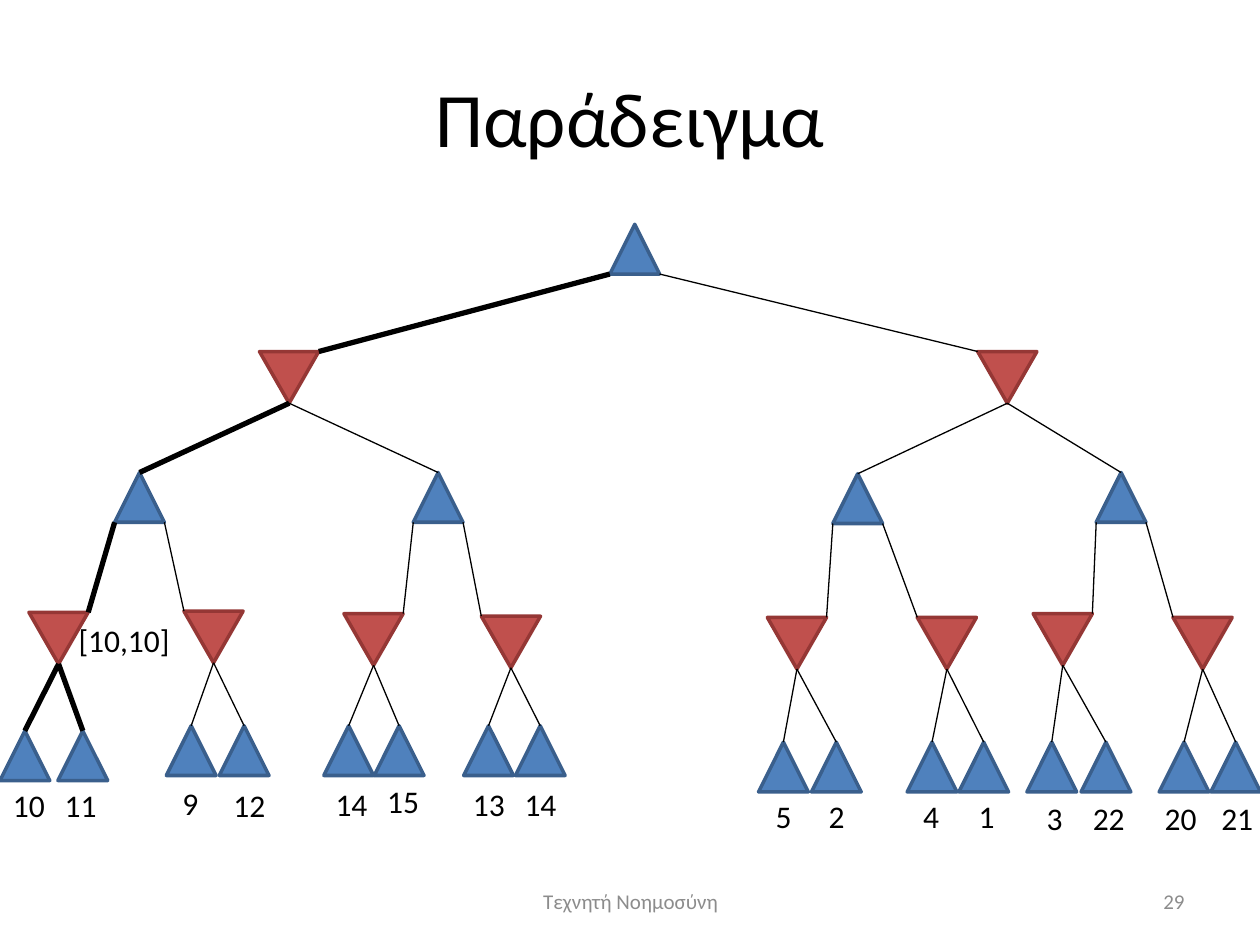
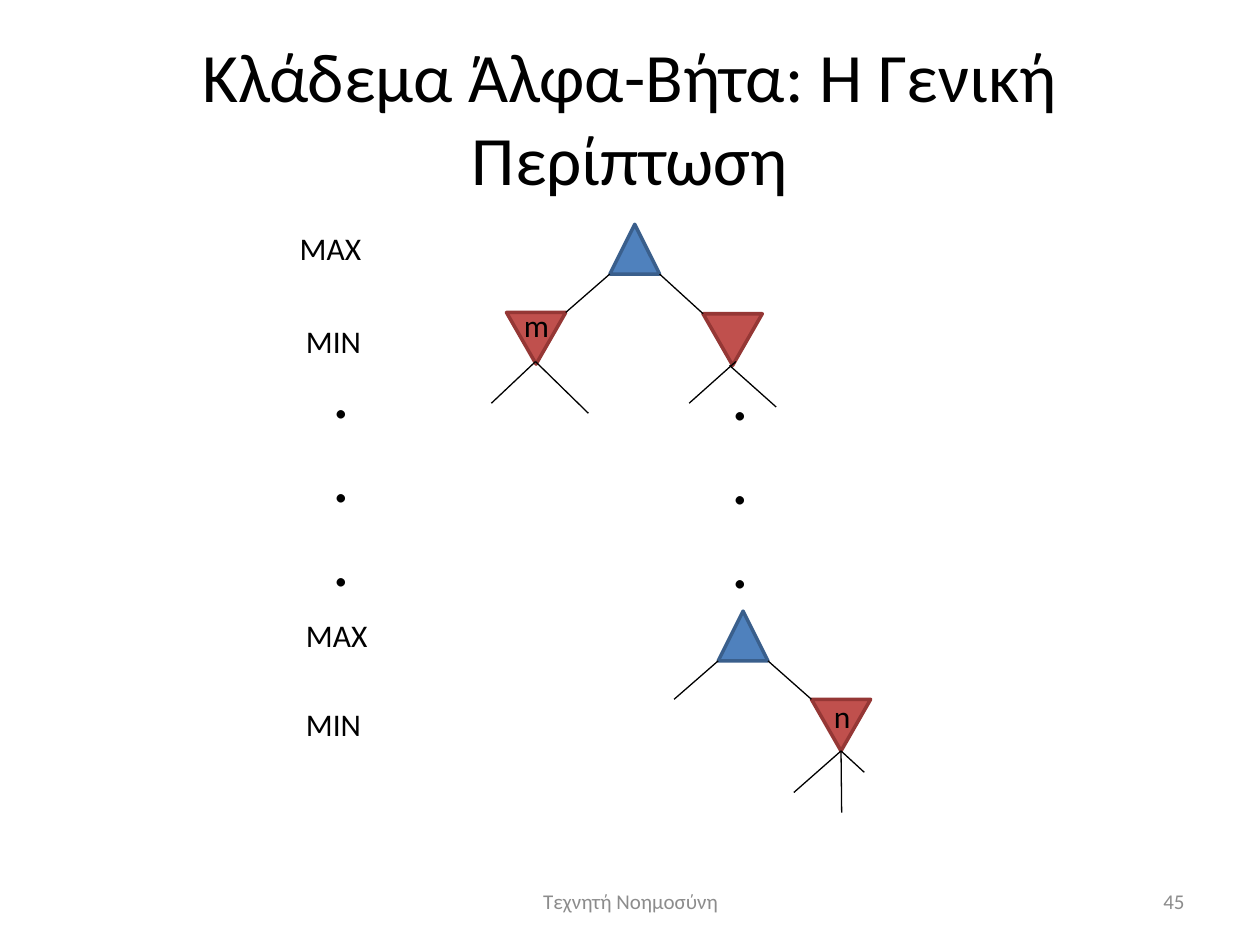
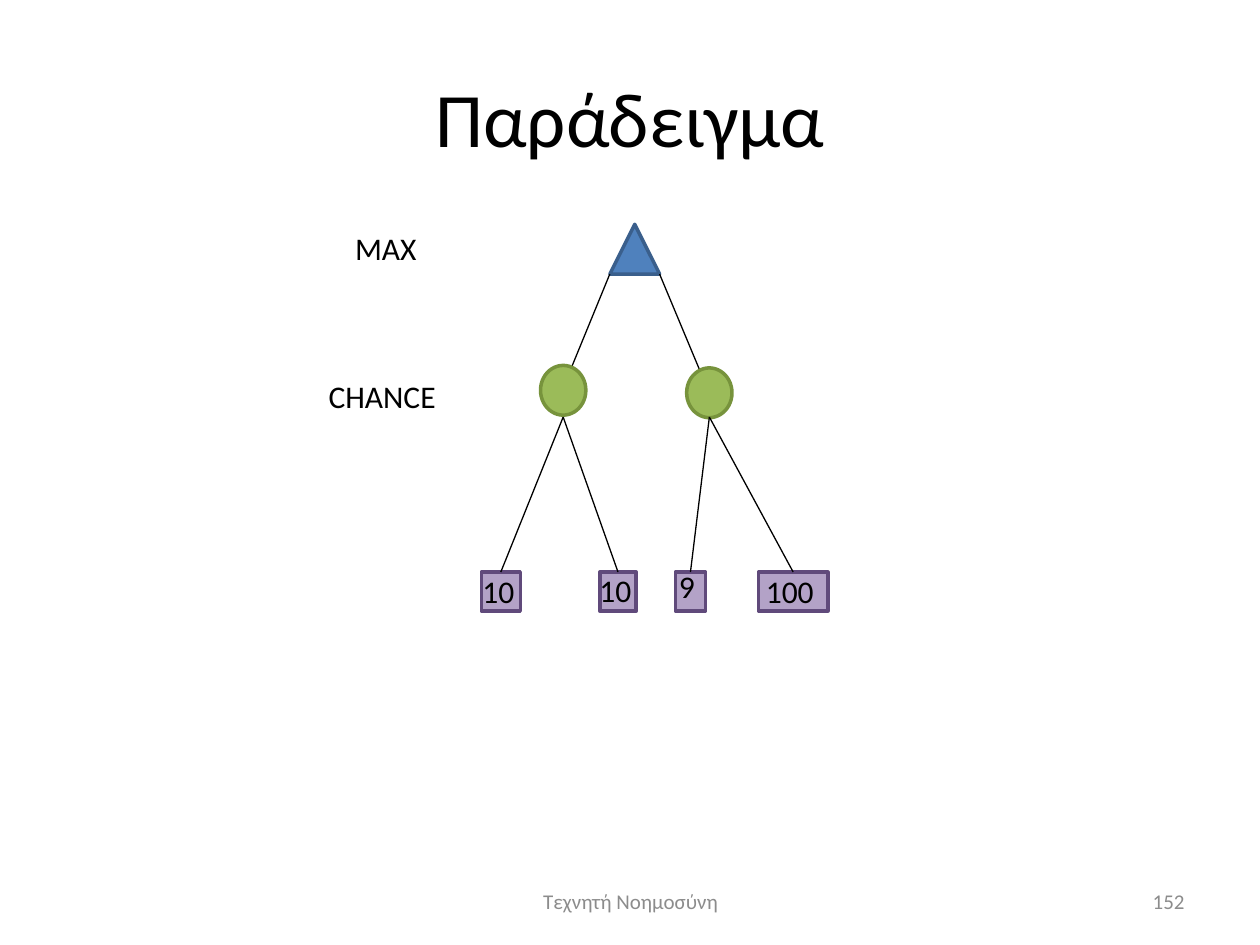
from collections import namedtuple

from pptx import Presentation
from pptx import util as u
from pptx.dml.color import RGBColor
from pptx.enum import shapes, text
from pptx.oxml.ns import qn
from lxml import etree

COLUMNS, ROWS = 100, 75
BLANK_LAYOUT = 6
FONT = "Calibri"
BLACK, GREY = "000000", "8C8C8C"
THIN, BOLD = 0.75, 3
LEFT, CENTER, RIGHT = text.PP_ALIGN.LEFT, text.PP_ALIGN.CENTER, text.PP_ALIGN.RIGHT

Role = namedtuple("Role", "outline fill border width height")
MAX = Role(shapes.MSO_SHAPE.ISOSCELES_TRIANGLE, "4F81BD", "3A5F8C", 3.95, 3.95)
MIN = Role(shapes.MSO_SHAPE.FLOWCHART_MERGE, "C0504D", "953735", 4.7, 4.1)
CHANCE = Role(shapes.MSO_SHAPE.OVAL, "9BBB59", "77933C", 3.6, 3.95)
OUTCOME = Role(shapes.MSO_SHAPE.RECTANGLE, "B3A2C7", "604A7B", 3.1, 3.1)


class Node(namedtuple("Node", "role left top")):
    def point(self, across, down):
        """Point at the given shares of the node's width and height."""
        return self.left + across * self.role.width, self.top + down * self.role.height

    def exit(self, side):
        """Where the edge to the child on side 0 (left) or 1 (right) starts."""
        return self.point(side, 1) if self.role is MAX else self.point(0.5, 1)

    def entry(self, side):
        """Where the edge from the parent ends, for the child on the given side."""
        return self.point(1 - side, 0) if self.role is MIN else self.point(0.5, 0)


def rgb(code):
    return RGBColor.from_string(code)


def write(frame, content, size=18, color=BLACK, align=LEFT, anchor=text.MSO_ANCHOR.TOP):
    frame.word_wrap = True
    frame.vertical_anchor = anchor
    for index, line in enumerate(content.split("\n")):
        paragraph = frame.paragraphs[0] if index == 0 else frame.add_paragraph()
        paragraph.alignment = align
        run = paragraph.add_run()
        run.text = line
        run.font.name, run.font.size = FONT, u.Pt(size)
        run.font.color.rgb = rgb(color)


class Deck:
    """Draws on the current slide; lengths are grid columns and rows."""

    def __init__(self):
        self.show = Presentation()
        self.show.slide_width, self.show.slide_height = u.Inches(10), u.Inches(7.5)
        self.slide = None

    def x(self, columns):
        return round(self.show.slide_width * columns / COLUMNS)

    def y(self, rows):
        return round(self.show.slide_height * rows / ROWS)

    def box(self, left, top, width, height):
        return self.x(left), self.y(top), self.x(width), self.y(height)

    def start(self, title, number, size=44):
        self.slide = self.show.slides.add_slide(self.show.slide_layouts[BLANK_LAYOUT])
        middle = text.MSO_ANCHOR.MIDDLE
        self.label(title, 5, 3, 90, 12.5, size=size, align=CENTER, anchor=middle)
        footer = dict(size=12, color=GREY, anchor=middle)
        self.label("Τεχνητή Νοημοσύνη", 34.2, 69.5, 31.7, 4, align=CENTER, **footer)
        self.label(str(number), 71.7, 69.5, 23.3, 4, align=RIGHT, **footer)

    def label(self, content, left, top, width=8.7, height=4, **style):
        holder = self.slide.shapes.add_textbox(*self.box(left, top, width, height))
        write(holder.text_frame, content, **style)

    def node(self, role, left, top):
        shape = self.slide.shapes.add_shape(
            role.outline, *self.box(left, top, role.width, role.height))
        shape.shadow.inherit = False
        shape.fill.solid()
        shape.fill.fore_color.rgb = rgb(role.fill)
        shape.line.color.rgb = rgb(role.border)
        shape.line.width = u.Pt(2)
        return Node(role, left, top)

    def edge(self, begin, end, weight=THIN):
        line = self.slide.shapes.add_connector(
            shapes.MSO_CONNECTOR.STRAIGHT,
            self.x(begin[0]), self.y(begin[1]), self.x(end[0]), self.y(end[1]))
        line.line.color.rgb = rgb(BLACK)
        line.line.width = u.Pt(weight)
        etree.SubElement(line._element.spPr, qn("a:effectLst"))

    def link(self, parent, child, side, weight=THIN):
        self.edge(parent.exit(side), child.entry(side), weight)

    def stubs(self, begin, *ends):
        """Edges to children that are not shown."""
        for end in ends:
            self.edge(begin, end)

    def dots(self, left, top):
        self.label(".\n.\n.", left, top, 2.3, 21.2, size=40)


def minimax_example(deck):
    deck.start("Παράδειγμα", 29)
    levels = [
        (MIN, [(20.6, 27.9), (77.6, 27.9)]),
        (MAX, [(9.1, 37.5), (32.8, 37.5), (66.1, 37.6), (87, 37.5)]),
        (MIN, [(2.3, 48.6), (14.6, 48.5), (27.3, 48.7), (38.2, 48.9),
               (60.9, 49), (72.8, 49), (82, 48.7), (93.1, 49)]),
        (MAX, [(0, 58), (4.6, 58)]
         + [(left, 57.6) for left in (13.2, 17.4, 25.7, 29.7, 36.8, 40.9)]
         + [(left, 58.9) for left in (60.2, 64.4, 72, 76.1, 81.5, 85.8, 92, 96.1)]),
    ]
    parents = [deck.node(MAX, 48.4, 17.8)]
    for role, places in levels:
        children = [deck.node(role, *place) for place in places]
        for index, child in enumerate(children):
            explored = index == 0 or (index == 1 and len(children) == 16)
            deck.link(parents[index // 2], child, index % 2, BOLD if explored else THIN)
        parents = children

    leaf_values = [
        (10, -0.4, 61.9), (11, 3.7, 61.9), (9, 12.4, 61.7), (12, 17.1, 61.9),
        (14, 25.2, 61.8), (15, 29.3, 61.6), (13, 36.1, 61.8), (14, 40.2, 61.8),
        (5, 59.5, 62.8), (2, 63.7, 62.8), (4, 71.2, 62.8), (1, 75.6, 62.8),
        (3, 81, 62.9), (22, 85.3, 62.9), (20, 91, 62.9), (21, 95.5, 62.9),
    ]
    for value, left, top in leaf_values:
        deck.label(str(value), left, top, 5.4, align=CENTER)
    deck.label("[10,10]", 4.6, 48.8, 10.5, align=CENTER)


def alpha_beta_general_case(deck):
    deck.start("Κλάδεμα Άλφα-Βήτα: Η Γενική Περίπτωση", 45, size=39.6)
    root = deck.node(MAX, 48.4, 17.8)
    for side, place in enumerate([(40.2, 24.8), (55.8, 24.9)]):
        deck.link(root, deck.node(MIN, *place), side)
    deck.stubs((42.5, 28.7), (39, 32), (46.7, 32.8))
    deck.stubs((58.4, 28.7), (54.7, 32))
    deck.stubs((57.9, 29), (61.6, 32.3))
    deck.dots(57.1, 27.3)

    deep_max = deck.node(MAX, 57, 48.5)
    deep_min = deck.node(MIN, 64.4, 55.5)
    deck.stubs(deep_max.exit(0), (53.5, 55.5))
    deck.link(deep_max, deep_min, 1)
    deck.stubs(deep_min.exit(0), (63, 62.9), (68.6, 61.3), (66.8, 64.5))
    deck.label("n", 65.2, 54.8, 3.9)
    deck.label("m", 40.6, 23.8, 3.9)

    for player, left, top in [("MAX", 22.8, 17.7), ("MIN", 23.3, 25.1),
                              ("MAX", 23.3, 48.4), ("MIN", 23.3, 55.5)]:
        deck.label(player, left, top)
    deck.dots(25.4, 27.2)


def chance_example(deck):
    deck.start("Παράδειγμα", 152)
    root = deck.node(MAX, 48.4, 17.8)
    chances = [((45.3, 29.3), (42.9, 29)), ((55.5, 29.3), (54.5, 29.2))]
    outcomes = [("10", 38.2, 3.1, 37.3, 44.9, 5.4), ("10", 47.6, 2.9, 46.6, 44.8, 5.4),
                ("9", 53.6, 2.4, 52.9, 44.5, 2.4), ("100", 60.2, 5.5, 59.8, 44.9, 6.4)]
    for side, (end, place) in enumerate(chances):
        deck.edge(root.exit(side), end)
        chance = deck.node(CHANCE, *place)
        fork = (chance.exit(side)[0], 33.1)
        for value, left, width, label_left, label_top, label_width in outcomes[2 * side:2 * side + 2]:
            outcome = deck.node(OUTCOME._replace(width=width), left, 45.4)
            deck.edge(fork, outcome.entry(side))
            deck.label(value, label_left, label_top, label_width)
    deck.label("ΜΑΧ", 27.2, 17.7, 9.4)
    deck.label("CHANCE", 25.1, 29.4, 12.4)


def main():
    deck = Deck()
    minimax_example(deck)
    alpha_beta_general_case(deck)
    chance_example(deck)
    deck.show.save("out.pptx")


if __name__ == "__main__":
    main()
